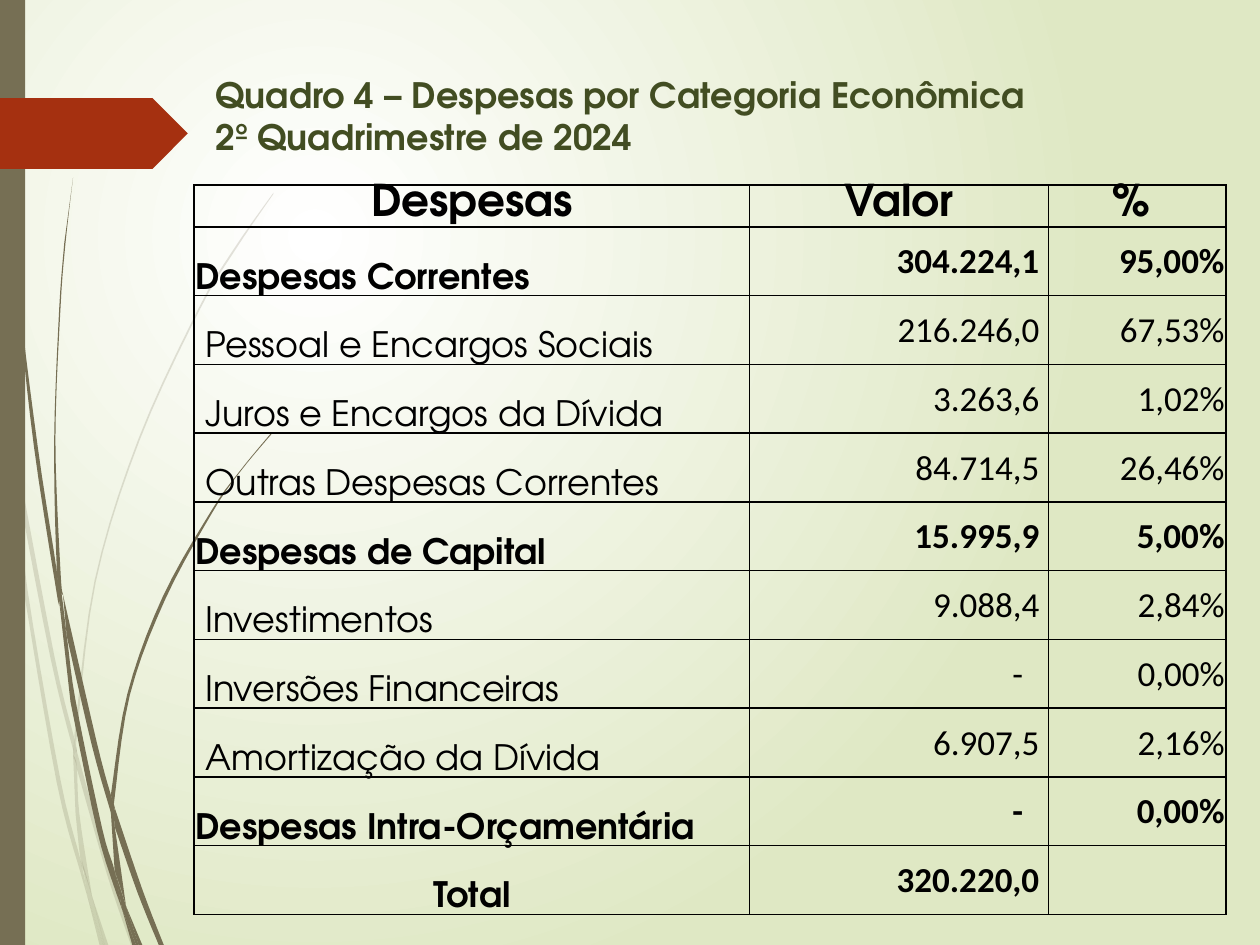
from lxml.etree import SubElement
from pptx import Presentation
from pptx.dml.color import RGBColor
from pptx.enum.shapes import MSO_SHAPE
from pptx.enum.text import MSO_ANCHOR, MSO_AUTO_SIZE, PP_ALIGN
from pptx.oxml import parse_xml
from pptx.oxml.ns import nsdecls, qn
from pptx.util import Inches, Pt

COLORS = {
    "center": "FFFFFF",
    "edge": "DFE8C4",
    "stem": "766F54",
    "arrow": "A53010",
    "title": "424D22",
    "ink": "000000",
}
HEAD_FONT, NUMBER_FONT = "TeX Gyre Adventor", "Calibri"
COLUMNS, ROWS = 10, 7.5

PALE_STEMS = [
    ([(0, 2.82), (0.06, 3.22), (0.08, 3.5)], [(0.07, 3.44), (0, 2.99)]),
    ([(0.1, 3.45), (0.43, 5.2), (0.59, 5.86)], [(0.59, 5.99), (0.4, 5.22), (0.12, 3.76)]),
    ([(0.61, 5.96), (0.64, 6.07), (0.88, 6.92), (1.08, 7.5)], [(1.04, 7.5), (0.85, 6.94), (0.61, 6.1)]),
    ([(0.73, 7.11), (0.86, 7.5)], [(0.83, 7.5)]),
    ([(0.08, 3.5), (0.12, 3.76), (0.22, 4.69), (0.48, 6.19), (0.64, 6.83), (0.7, 7.14)],
     [(0.64, 6.93), (0.45, 6.21), (0.19, 4.7)]),
    ([(0.58, 5.99), (0.61, 6.08), (0.63, 6.46), (0.73, 7.11)], [(0.67, 6.92), (0.64, 6.83), (0.6, 6.46)]),
    ([(0.61, 5.96), (0.61, 5.84), (0.76, 4.62), (1.11, 3.49), (1.59, 2.45), (1.87, 1.98), (2.17, 1.54)],
     [(2.17, 1.53), (1.86, 1.97), (1.58, 2.44), (1.1, 3.48), (0.75, 4.61), (0.59, 5.84)]),
    ([(0.7, 7.14), (0.82, 7.5)], [(0.79, 7.5)]),
    ([(0.59, 5.86), (0.61, 5.96), (0.61, 6.1)], [(0.61, 6.08), (0.58, 5.99)]),
    ([(0.65, 6.83), (0.73, 7.11), (0.83, 7.5)], [(0.82, 7.5), (0.7, 7.14)]),
]
DARK_STEMS = [
    ([(0.03, 0), (0.04, 0.48), (0.06, 1.09), (0.15, 2.32), (0.3, 3.55), (0.45, 4.53), (0.47, 4.81)],
     [(0.46, 4.77), (0.27, 3.55), (0.14, 2.33), (0.05, 1.1), (0.03, 0.48), (0.02, 0)]),
    ([(0.5, 4.72), (0.77, 5.9), (0.88, 6.31)], [(0.88, 6.45), (0.73, 5.92), (0.53, 5.05)]),
    ([(0.91, 6.41), (1.13, 7.06), (1.3, 7.5)], [(1.26, 7.5), (1.09, 7.08), (0.91, 6.56)]),
    ([(0.47, 4.77), (0.53, 5.05), (0.6, 5.56), (0.81, 6.57), (0.91, 6.91), (0.97, 7.22)],
     [(0.92, 7.08), (0.77, 6.59), (0.56, 5.57)]),
    ([(0.5, 4.72), (0.48, 4.53), (0.44, 3.49), (0.48, 2.45), (0.52, 1.93), (0.58, 1.41)],
     [(0.51, 1.93), (0.47, 2.45), (0.43, 3.49), (0.45, 4.49), (0.49, 4.72)]),
    ([(1, 7.19), (1.13, 7.5)], [(1.1, 7.5)]),
    ([(0.45, 4.49), (0.49, 4.72), (0.53, 5.05)], [(0.47, 4.77), (0.45, 4.53)]),
    ([(0.91, 6.41), (0.91, 6.33), (1.03, 5.52), (1.31, 4.76), (1.69, 4.06), (1.91, 3.74), (2.16, 3.44)],
     [(2.15, 3.44), (1.91, 3.73), (1.68, 4.05), (1.29, 4.74), (1.01, 5.51), (0.88, 6.31)]),
    ([(0.97, 7.22), (1.08, 7.5)], [(1.05, 7.5)]),
    ([(0.88, 6.45), (0.91, 6.56), (1, 7.19)], [(0.96, 7.06), (0.91, 6.91)]),
    ([(0.88, 6.31), (0.91, 6.41), (0.91, 6.56)], [(0.88, 6.45)]),
    ([(0.91, 6.91), (1, 7.19), (1.1, 7.5)], [(1.08, 7.5), (0.97, 7.22)]),
]
TITLE = "Quadro 4 – Despesas por Categoria Econômica\v2º Quadrimestre de 2024"
HEADER = ("Despesas", "Valor", "%")
EXPENSES = [
    ("Despesas Correntes", "304.224,1", "95,00%"),
    ("Pessoal e Encargos Sociais", "216.246,0", "67,53%"),
    ("Juros e Encargos da Dívida", "3.263,6", "1,02%"),
    ("Outras Despesas Correntes", "84.714,5", "26,46%"),
    ("Despesas de Capital", "15.995,9", "5,00%"),
    ("Investimentos", "9.088,4", "2,84%"),
    ("Inversões Financeiras", "-", "0,00%"),
    ("Amortização da Dívida", "6.907,5", "2,16%"),
    ("Despesas Intra-Orçamentária", "-", "0,00%"),
    ("Total", "320.220,0", ""),
]
GROUP_ROWS = ("Despesas Correntes", "Despesas de Capital", "Despesas Intra-Orçamentária", "Total")


def smooth(nodes, steps=5):
    padded = [nodes[0], *nodes, nodes[-1]]
    curve = [nodes[0]]
    for before, start, end, after in zip(padded, padded[1:], padded[2:], padded[3:]):
        for step in range(1, steps + 1):
            t = step / steps
            curve.append(tuple(
                0.5 * (2 * b + (c - a) * t + (2 * a - 5 * b + 4 * c - d) * t ** 2
                       + (3 * b - a - 3 * c + d) * t ** 3)
                for a, b, c, d in zip(before, start, end, after)))
    return curve


class SlideBuilder:
    def __init__(self, deck):
        self.deck = deck
        self.page = deck.slides.add_slide(deck.slide_layouts[5])

    def grid(self, column, row):
        return (round(self.deck.slide_width * column / COLUMNS),
                round(self.deck.slide_height * row / ROWS))

    def color(self, name):
        return RGBColor.from_string(COLORS[name])

    def paint(self, shape, name):
        shape.shadow.inherit = False
        shape.fill.solid()
        shape.fill.fore_color.rgb = self.color(name)
        shape.line.fill.background()

    def background(self):
        fill = self.page.background.fill
        fill.gradient()
        for stop, name, position in zip(fill.gradient_stops, ("center", "edge"), (0, 1)):
            stop.color.rgb = self.color(name)
            stop.position = position
        linear = next(self.page.element.iter(qn("a:lin")))
        radial = parse_xml(f'<a:path {nsdecls("a")} path="circle">'
                           '<a:fillToRect l="25000" t="25000" r="75000" b="75000"/></a:path>')
        linear.getparent().replace(linear, radial)

    def preset(self, kind, column, row, width, height, name):
        shape = self.page.shapes.add_shape(kind, *self.grid(column, row), *self.grid(width, height))
        self.paint(shape, name)

    def stem(self, outward, back, opacity=None):
        points = [self.grid(*point) for point in smooth(outward) + smooth(back)]
        builder = self.page.shapes.build_freeform(*points[0], scale=1.0)
        builder.add_line_segments(points[1:], close=True)
        shape = builder.convert_to_shape()
        self.paint(shape, "stem")
        if opacity:
            tint = next(shape.element.spPr.iter(qn("a:srgbClr")))
            SubElement(tint, qn("a:alpha")).set("val", str(opacity * 1000))

    def style(self, para, size, font, bold, name, align):
        para.alignment = align
        for span in para.runs:
            span.font.size, span.font.name, span.font.bold = Pt(size), font, bold
            span.font.color.rgb = self.color(name)

    def title(self, text, column, row, width, height):
        box = self.page.shapes.title
        box.left, box.top = self.grid(column, row)
        box.width, box.height = self.grid(width, height)
        frame = box.text_frame
        frame.text = text
        frame.word_wrap = True
        frame.auto_size = MSO_AUTO_SIZE.NONE
        frame.vertical_anchor = MSO_ANCHOR.MIDDLE
        self.style(frame.paragraphs[0], 20, HEAD_FONT, True, "title", PP_ALIGN.LEFT)

    def cell(self, cell, text, size, font, bold, align, anchor, left=0.01, right=0.01):
        cell.margin_left, cell.margin_right = Inches(left), Inches(right)
        cell.margin_top, cell.margin_bottom = Inches(0.01), 0
        cell.vertical_anchor = anchor
        cell.text_frame.text = text
        self.style(cell.text_frame.paragraphs[0], size, font, bold, "ink", align)
        cell.fill.background()
        properties = cell._tc.get_or_add_tcPr()
        for index, side in enumerate(("lnL", "lnR", "lnT", "lnB")):
            properties.insert(index, parse_xml(
                f'<a:{side} {nsdecls("a")} w="{Pt(1)}"><a:solidFill>'
                f'<a:srgbClr val="{COLORS["ink"]}"/></a:solidFill></a:{side}>'))

    def expense_table(self, column, row, widths, header_height, body_height):
        size = self.grid(sum(widths), header_height + body_height)
        table = self.page.shapes.add_table(
            len(EXPENSES) + 1, len(widths), *self.grid(column, row), *size).table
        table.first_row = table.horz_banding = False
        for index, width in enumerate(widths):
            table.columns[index].width = self.grid(width, 0)[0]
        for index, line in enumerate(table.rows):
            height = body_height / len(EXPENSES) if index else header_height
            line.height = self.grid(0, height)[1]
        for index, text in enumerate(HEADER):
            cell = table.cell(0, index)
            self.cell(cell, text, 25, HEAD_FONT, True, PP_ALIGN.CENTER, MSO_ANCHOR.MIDDLE,
                      right=0.1 if text == "%" else 0.01)
            cell.text_frame.paragraphs[0].line_spacing = 0.8
        for index, (label, value, share) in enumerate(EXPENSES, 1):
            bold = label in GROUP_ROWS
            align = PP_ALIGN.CENTER if label == "Total" else PP_ALIGN.LEFT
            self.cell(table.cell(index, 0), label, 20, HEAD_FONT, bold, align,
                      MSO_ANCHOR.BOTTOM, left=0.01 if bold else 0.09)
            for place, text, right in ((1, value, 0.2 if value == "-" else 0.07), (2, share, 0.01)):
                self.cell(table.cell(index, place), text, 20, NUMBER_FONT, bold,
                          PP_ALIGN.RIGHT, MSO_ANCHOR.MIDDLE, right=right)


def main():
    deck = Presentation()
    deck.slide_width, deck.slide_height = Inches(10), Inches(7.5)
    builder = SlideBuilder(deck)
    builder.background()
    for edges in PALE_STEMS:
        builder.stem(*edges, opacity=20)
    for edges in DARK_STEMS:
        builder.stem(*edges)
    builder.preset(MSO_SHAPE.RECTANGLE, 0, 0, 0.2, ROWS, "stem")
    builder.preset(MSO_SHAPE.PENTAGON, 0, 0.78, 1.49, 0.56, "arrow")
    builder.title(TITLE, 1.61, 0.52, 8.39, 0.79)
    builder.expense_table(1.54, 1.47, (4.41, 2.37, 1.41), 0.33, 5.46)
    deck.save("out.pptx")


if __name__ == "__main__":
    main()
